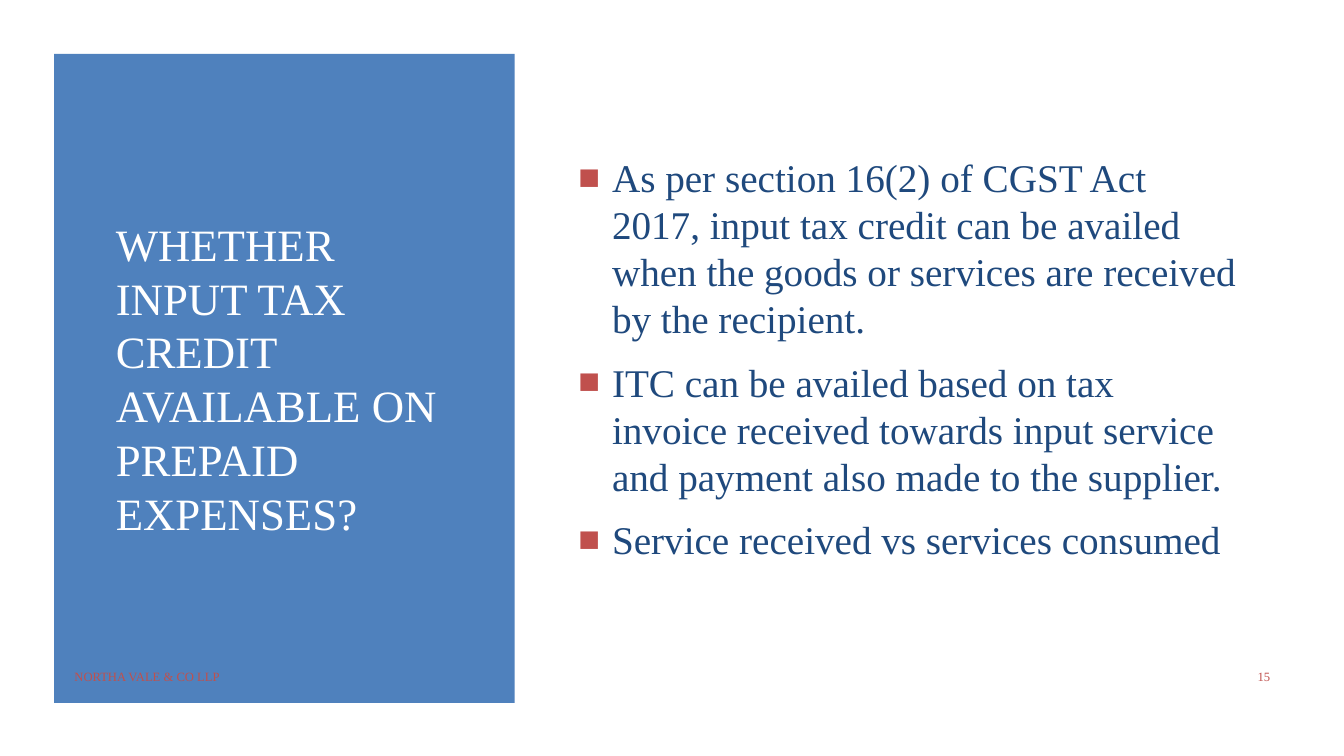
import dataclasses

import lxml.etree
import pptx
import pptx.dml.color
import pptx.enum.shapes
import pptx.enum.text
import pptx.oxml.ns
import pptx.shapes.autoshape
import pptx.slide
import pptx.util

Pt = pptx.util.Pt
Color = pptx.dml.color.RGBColor
Align = pptx.enum.text.PP_ALIGN


@dataclasses.dataclass(frozen=True)
class Theme:
    font: str = "Times New Roman"
    white: str = "FFFFFF"
    blue: str = "4F81BD"
    navy: str = "1F497D"
    red: str = "C0504D"
    title: float = 32
    body: float = 28
    small: float = 9


@dataclasses.dataclass(frozen=True)
class Box:
    left: float
    top: float
    width: float
    height: float


@dataclasses.dataclass(frozen=True)
class Panel:
    box: Box
    fill: str


@dataclasses.dataclass(frozen=True)
class Label:
    box: Box
    lines: tuple[str, ...]
    size: float
    color: str
    align: Align = Align.LEFT
    listed: bool = False


THEME = Theme()
WIDTH, HEIGHT = 960, 540
INDENT = 24

PANELS = (
    Panel(Box(0, 0, WIDTH, HEIGHT), THEME.white),
    Panel(Box(38.6, 38.4, 329, 463.6), THEME.blue),
)

LABELS = (
    Label(
        Box(75.6, 87.8, 257.8, 364.3),
        ("WHETHER INPUT TAX CREDIT AVAILABLE ON PREPAID EXPENSES?",),
        THEME.title,
        THEME.white,
    ),
    Label(
        Box(406.1, 42.5, 484.6, 426.2),
        (
            "As per section 16(2) of CGST Act 2017, input tax credit can be "
            "availed when the goods or services are received by the recipient.",
            "ITC can be availed based on tax invoice received towards input "
            "service and payment also made to the supplier.",
            "Service received vs services consumed",
        ),
        THEME.body,
        THEME.navy,
        listed=True,
    ),
    Label(
        Box(46.1, 468.7, 544.3, 28.8),
        ("NORTHA VALE & CO LLP",),
        THEME.small,
        THEME.red,
    ),
    Label(
        Box(831.6, 468.7, 82.8, 28.8),
        ("15",),
        THEME.small,
        THEME.red,
        Align.RIGHT,
    ),
)


def place(box: Box) -> tuple[pptx.util.Length, ...]:
    return tuple(Pt(side) for side in dataclasses.astuple(box))


def draw_panel(slide: pptx.slide.Slide, panel: Panel) -> None:
    kind = pptx.enum.shapes.MSO_SHAPE.RECTANGLE
    shape = slide.shapes.add_shape(kind, *place(panel.box))
    shape.shadow.inherit = False
    shape.fill.solid()
    shape.fill.fore_color.rgb = Color.from_string(panel.fill)
    shape.line.fill.background()


def add_bullet(line: pptx.text.text._Paragraph, size: float) -> None:
    """Give the line a red square bullet, a hanging indent and spacing."""
    line.space_before = Pt(size * 0.2)
    line.space_after = Pt(6)
    props = line._p.get_or_add_pPr()
    props.set("marL", str(Pt(INDENT)))
    props.set("indent", str(-Pt(INDENT)))
    name = pptx.oxml.ns.qn
    tint = lxml.etree.SubElement(props, name("a:buClr"))
    lxml.etree.SubElement(tint, name("a:srgbClr"), val=THEME.red)
    lxml.etree.SubElement(props, name("a:buSzPct"), val="92000")
    lxml.etree.SubElement(props, name("a:buFont"), typeface=THEME.font)
    lxml.etree.SubElement(props, name("a:buChar"), char="■")


def draw_label(slide: pptx.slide.Slide, label: Label) -> None:
    frame = slide.shapes.add_textbox(*place(label.box)).text_frame
    frame.word_wrap = True
    frame.vertical_anchor = pptx.enum.text.MSO_ANCHOR.MIDDLE
    frame.text = "\n".join(label.lines)
    for line in frame.paragraphs:
        line.alignment = label.align
        if label.listed:
            add_bullet(line, label.size)
        line.font.name = THEME.font
        line.font.size = Pt(label.size)
        line.font.color.rgb = Color.from_string(label.color)


def main() -> None:
    deck = pptx.Presentation()
    deck.slide_width, deck.slide_height = Pt(WIDTH), Pt(HEIGHT)
    slide = deck.slides.add_slide(deck.slide_layouts[6])
    for panel in PANELS:
        draw_panel(slide, panel)
    for label in LABELS:
        draw_label(slide, label)
    deck.save("out.pptx")


if __name__ == "__main__":
    main()
